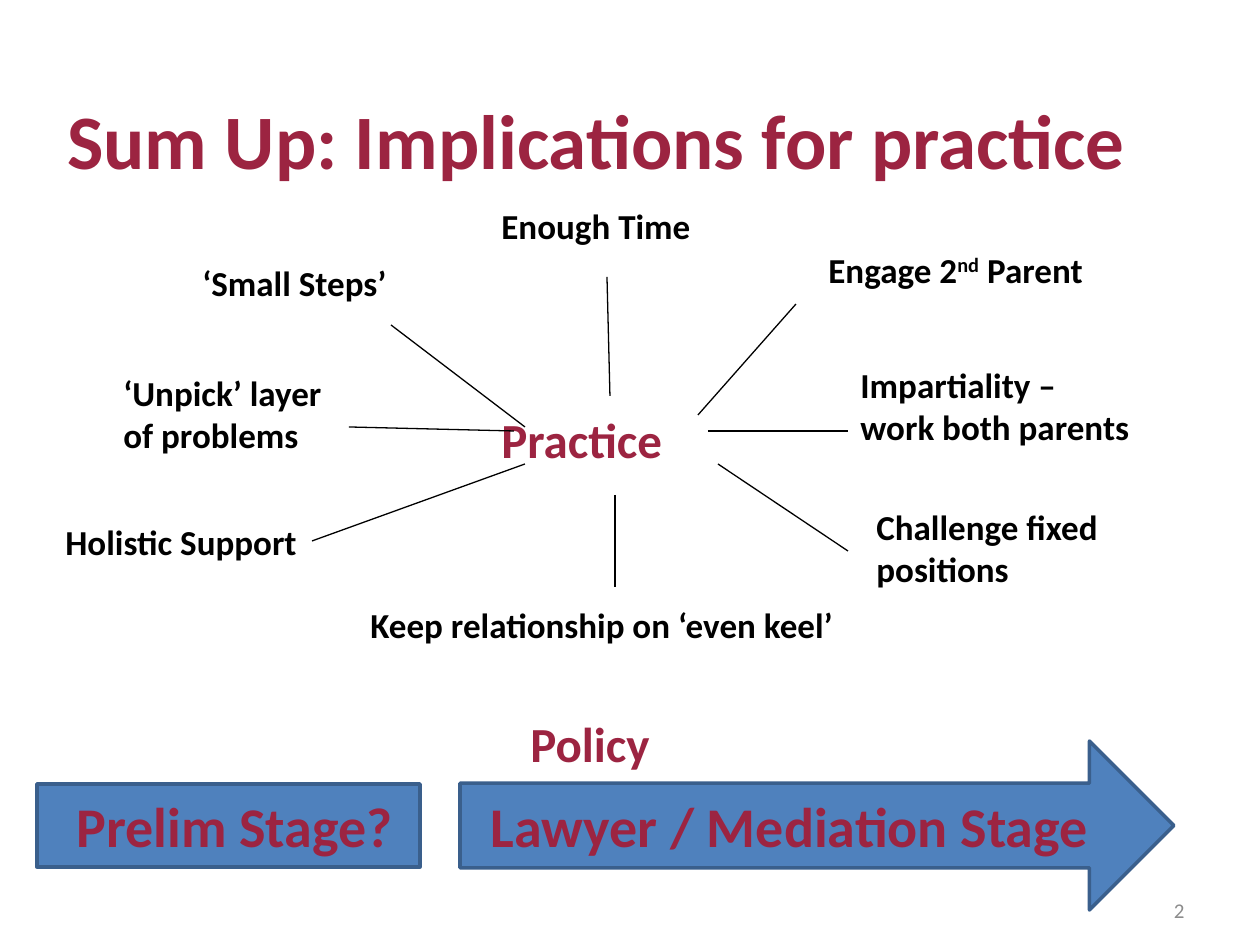
import pptx
import pptx.util
import pptx.dml.color
import pptx.enum.shapes
import pptx.enum.text
import pptx.oxml.ns
import lxml.etree

PX = 914400 / 126
CRIMSON, BLUE, NAVY, BLACK, GREY = "9C2441", "4F81BD", "3A5F8C", "000000", "8C8C8C"
ALIGN = pptx.enum.text.PP_ALIGN
ANCHOR = pptx.enum.text.MSO_ANCHOR
SHAPE = pptx.enum.shapes.MSO_SHAPE


def emu(*lengths):
    return [pptx.util.Emu(round(length * PX)) for length in lengths]


def write(frame, text, size, colour, bold=True, align=ALIGN.LEFT, anchor=ANCHOR.TOP):
    frame.word_wrap = True
    frame.vertical_anchor = anchor
    paragraph = frame.paragraphs[0]
    paragraph.text = text
    paragraph.alignment = align
    for run in paragraph.runs:
        run.font.name = "Calibri"
        run.font.size = pptx.util.Pt(size)
        run.font.bold = bold
        run.font.color.rgb = pptx.dml.color.RGBColor.from_string(colour)
    return paragraph


deck = pptx.Presentation()
deck.slide_width, deck.slide_height = emu(1260, 945)
slide = deck.slides.add_slide(deck.slide_layouts[6])
shapes = slide.shapes

title = shapes.add_textbox(*emu(55, 49, 1160, 144))
write(title.text_frame, "Sum Up: Implications for practice", 44, CRIMSON).line_spacing = 1.4

practice = shapes.add_textbox(*emu(445, 383, 329, 97))
practice.text_frame.margin_top, practice.text_frame.margin_right = emu(26, 68)
write(practice.text_frame, "Practice", 28, CRIMSON, align=ALIGN.CENTER)

implications = [
    ("Keep relationship on ‘even keel’", 358, 597, 501, 55),
    ("Challenge fixed positions", 864, 499, 335, 97),
    ("Impartiality – work both parents", 848, 357, 299, 97),
    ("‘Small Steps’", 190, 255, 336, 55),
    ("Enough Time", 489, 198, 247, 55),
    ("‘Unpick’ layer of problems", 111, 365, 241, 97),
    ("Holistic Support", 53, 514, 357, 55),
]
for text, *box in implications:
    write(shapes.add_textbox(*emu(*box)).text_frame, text, 20, BLACK)

engage = shapes.add_textbox(*emu(816, 242, 323, 55))
engage_line = write(engage.text_frame, "Engage 2", 20, BLACK)
for part in ("nd", " Parent"):
    run = engage_line.add_run()
    run.text = part
    run.font.name = "Calibri"
    run.font.size = pptx.util.Pt(20)
    run.font.bold = True
    run.font.color.rgb = pptx.dml.color.RGBColor.from_string(BLACK)
engage_line.runs[1].font._element.set("baseline", "30000")

spokes = [
    (391, 325, 525, 427),
    (607, 277, 610, 396),
    (796, 304, 698, 415),
    (708, 431, 848, 431),
    (718, 464, 848, 551),
    (615, 495, 615, 587),
    (525, 464, 312, 541),
    (349, 427, 514, 431),
]
for ends in spokes:
    spoke = shapes.add_connector(pptx.enum.shapes.MSO_CONNECTOR.STRAIGHT, *emu(*ends))
    spoke.line.width = pptx.util.Pt(0.75)
    spoke.line.color.rgb = pptx.dml.color.RGBColor.from_string(BLACK)
    lxml.etree.SubElement(spoke._element.spPr, pptx.oxml.ns.qn("a:effectLst"))

page_number = shapes.add_textbox(*emu(1092, 885, 105, 50))
write(page_number.text_frame, "2", 12, GREY, False, ALIGN.RIGHT, ANCHOR.MIDDLE)

stages = [
    (SHAPE.RIGHT_ARROW, "Lawyer / Mediation Stage ", 460, 741, 714, 169),
    (SHAPE.RECTANGLE, " Prelim Stage?", 37, 784, 383, 83),
]
for outline, text, *box in stages:
    stage = shapes.add_shape(outline, *emu(*box))
    stage.shadow.inherit = False
    stage.fill.solid()
    stage.fill.fore_color.rgb = pptx.dml.color.RGBColor.from_string(BLUE)
    stage.line.color.rgb = pptx.dml.color.RGBColor.from_string(NAVY)
    stage.line.width = pptx.util.Pt(2)
    write(stage.text_frame, text, 32, CRIMSON, align=ALIGN.CENTER, anchor=ANCHOR.MIDDLE)

policy = shapes.add_textbox(*emu(518, 707, 227, 72))
write(policy.text_frame, "Policy", 28, CRIMSON)

deck.save("out.pptx")
